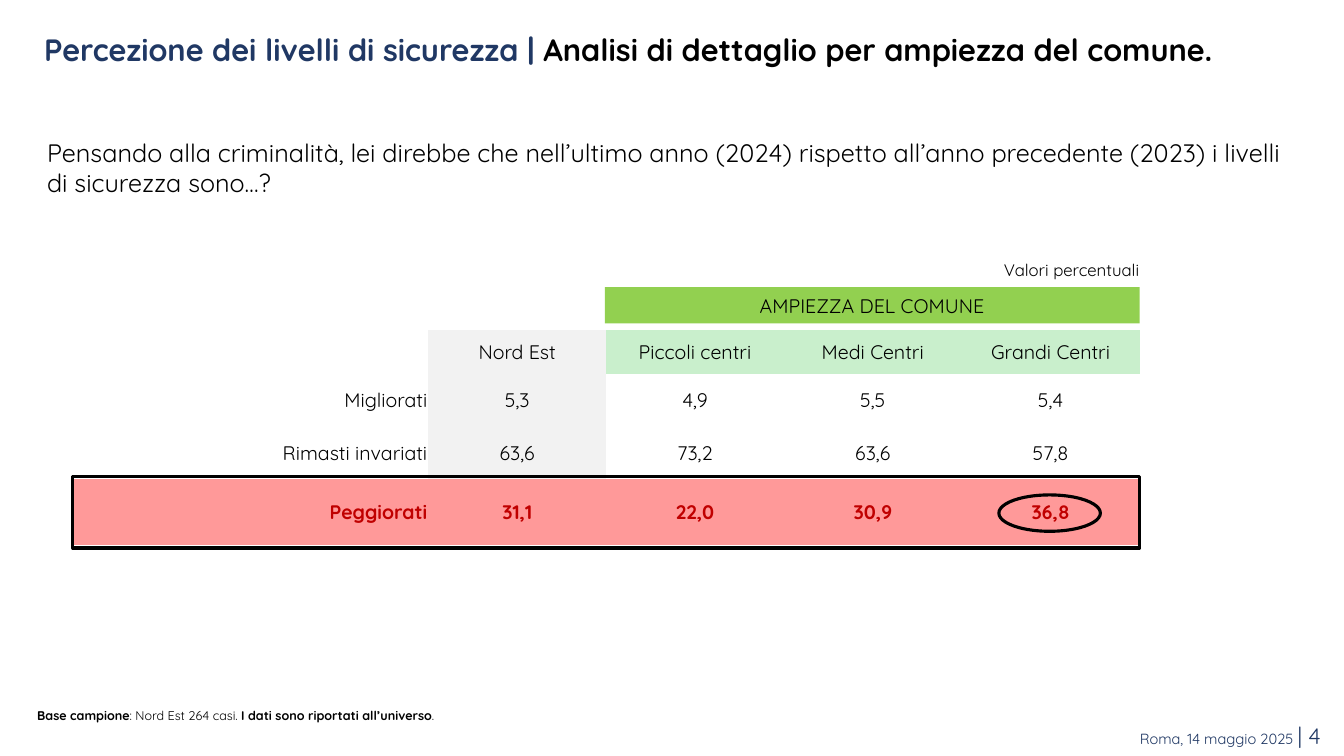
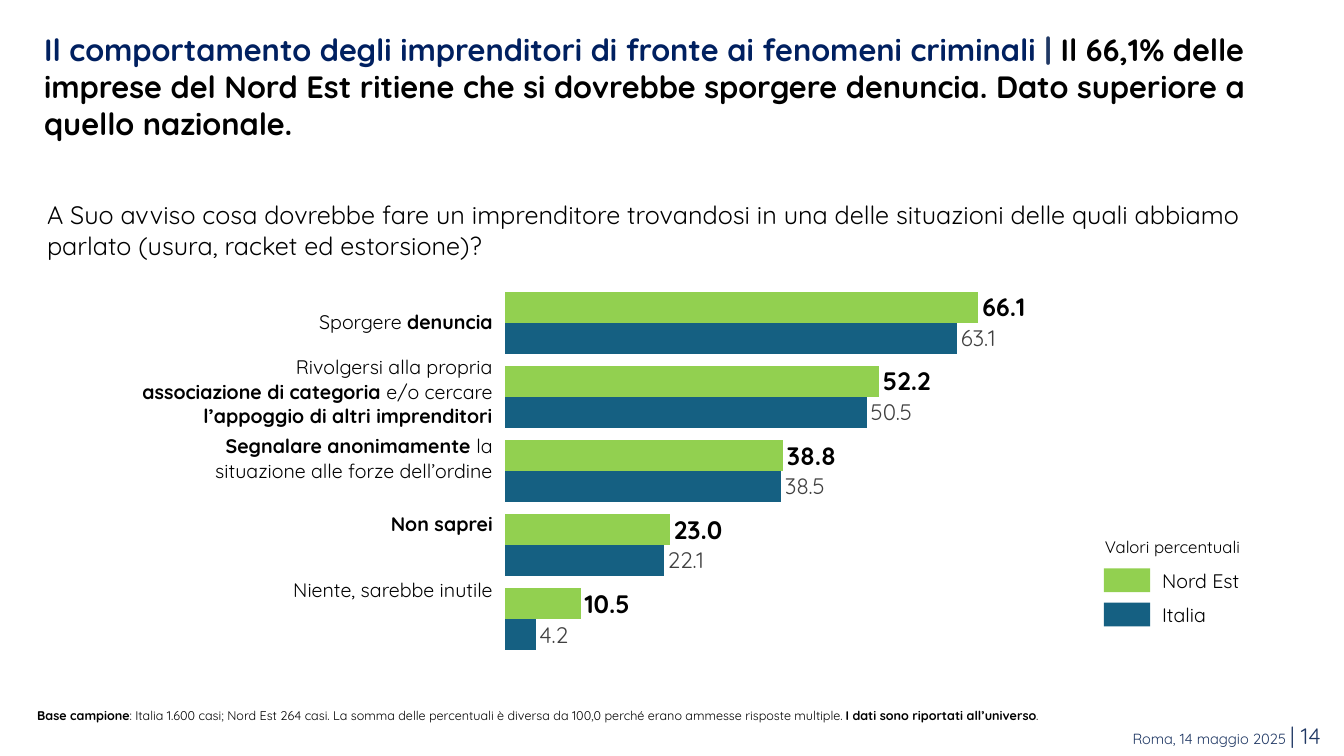
from lxml import etree
from pptx import Presentation
from pptx.chart.data import CategoryChartData
from pptx.dml.color import RGBColor
from pptx.enum import chart as charts, shapes, text
from pptx.oxml import parse_xml
from pptx.oxml.ns import nsdecls, qn
from pptx.util import Pt

FONT = "Quicksand"
BLACK = RGBColor(0x00, 0x00, 0x00)
WHITE = RGBColor(0xFF, 0xFF, 0xFF)
GREY = RGBColor(0x40, 0x40, 0x40)
LIGHT_GREY = RGBColor(0xF2, 0xF2, 0xF2)
NAVY = RGBColor(0x20, 0x38, 0x64)
DARK_BLUE = RGBColor(0x00, 0x20, 0x60)
BLUE = RGBColor(0x15, 0x60, 0x82)
GREEN = RGBColor(0x92, 0xD0, 0x50)
LIGHT_GREEN = RGBColor(0xC9, 0xEF, 0xCC)
PINK = RGBColor(0xFF, 0x99, 0x99)
RED = RGBColor(0xC0, 0x00, 0x00)
LEFT, CENTER, RIGHT, JUSTIFY = (
    text.PP_ALIGN.LEFT, text.PP_ALIGN.CENTER, text.PP_ALIGN.RIGHT, text.PP_ALIGN.JUSTIFY)
PLAIN_TABLE = "{2D5ABB26-0587-4C30-8999-92F81FD0307C}"


def write(paragraph, runs, size, alignment=LEFT):
    """Each run is (text, bold, colour) and may end with its own size."""
    paragraph.alignment = alignment
    for content, bold, color, *own_size in runs:
        run = paragraph.add_run()
        run.text = content
        run.font.name = FONT
        run.font.size = Pt(own_size[0] if own_size else size)
        run.font.bold = bold
        run.font.color.rgb = color


def add_text(slide, left, top, width, height, runs, size, alignment=LEFT):
    box = slide.shapes.add_textbox(Pt(left), Pt(top), Pt(width), Pt(height))
    box.text_frame.word_wrap = True
    paragraph = box.text_frame.paragraphs[0]
    write(paragraph, runs, size, alignment)
    return paragraph


presentation = Presentation()
presentation.slide_width, presentation.slide_height = Pt(960), Pt(540)

# Title, question, sample note and footer of both slides
pages = [
    {"number": 4, "title_height": 32.5, "question_top": 94.5, "question_width": 912,
     "title": [("Percezione dei livelli di sicurezza |", True, NAVY),
               (" Analisi di dettaglio per ampiezza del comune.", True, BLACK)],
     "question": "Pensando alla criminalità, lei direbbe che nell’ultimo anno (2024) rispetto "
                 "all’anno precedente (2023) i livelli di sicurezza sono…?",
     "sample": ": Nord Est 264 casi. "},
    {"number": 14, "title_height": 85.5, "question_top": 139, "question_width": 893.5,
     "title": [("Il comportamento degli imprenditori di fronte ai fenomeni criminali ",
                True, DARK_BLUE),
               ("|", True, NAVY),
               (" Il 66,1% delle imprese del Nord Est ritiene che si dovrebbe sporgere "
                "denuncia. Dato superiore a quello nazionale.", True, BLACK)],
     "question": "A Suo avviso cosa dovrebbe fare un imprenditore trovandosi in una delle "
                 "situazioni delle quali abbiamo parlato (usura, racket ed estorsione)?",
     "sample": ": Italia 1.600 casi; Nord Est 264 casi. La somma delle percentuali è diversa "
               "da 100,0 perché erano ammesse risposte multiple. "},
]
slides = []
for page in pages:
    slide = presentation.slides.add_slide(presentation.slide_layouts[5])
    slides.append(slide)
    title = slide.shapes.title
    title.left, title.top = Pt(26.5), Pt(19.5)
    title.width, title.height = Pt(929.5), Pt(page["title_height"])
    frame = title.text_frame
    frame.word_wrap = True
    frame.auto_size = text.MSO_AUTO_SIZE.NONE
    frame.vertical_anchor = text.MSO_ANCHOR.TOP
    frame.margin_left = frame.margin_right = Pt(5)
    frame.margin_top = frame.margin_bottom = Pt(2.7)
    write(frame.paragraphs[0], page["title"], 22)

    add_text(slide, 26.5, page["question_top"], page["question_width"], 51,
             [(page["question"], False, BLACK)], 18)
    note = add_text(slide, 19.5, 501, 903, 18,
                    [("Base campione", True, BLACK), (page["sample"], False, BLACK),
                     ("I dati sono riportati all’universo", True, BLACK),
                     (".", False, BLACK)], 9, JUSTIFY)
    note.line_spacing = 1.1
    add_text(slide, 451.5, 512, 499, 26.5,
             [("Roma, 14 maggio 2025 ", False, NAVY),
              (f"| {page['number']}", False, NAVY, 16)], 10.5, RIGHT)

security, behaviour = slides

# Security: band above the table
add_text(security, 666, 182, 155, 22, [("Valori percentuali", False, BLACK)], 12, RIGHT)
band = security.shapes.add_shape(shapes.MSO_SHAPE.RECTANGLE, Pt(432), Pt(205), Pt(382), Pt(26))
band.shadow.inherit = False
band.fill.solid()
band.fill.fore_color.rgb = GREEN
band.line.fill.background()
band.text_frame.vertical_anchor = text.MSO_ANCHOR.MIDDLE
write(band.text_frame.paragraphs[0], [("AMPIEZZA DEL COMUNE", False, BLACK)], 14, CENTER)

# Security: table
rows = [
    ["", "Nord Est", "Piccoli centri", "Medi Centri", "Grandi Centri"],
    ["Migliorati", "5,3", "4,9", "5,5", "5,4"],
    ["Rimasti invariati", "63,6", "73,2", "63,6", "57,8"],
    ["Peggiorati", "31,1", "22,0", "30,9", "36,8"],
]
table = security.shapes.add_table(4, 5, Pt(52), Pt(235.5), Pt(762), Pt(154)).table
table.first_row = table.horz_banding = False
table._tbl.tblPr.find(qn("a:tableStyleId")).text = PLAIN_TABLE
for column, width in zip(table.columns, [254] + [127] * 4):
    column.width = Pt(width)
for row, height in zip(table.rows, [31.5, 37.5, 37.5, 47.5]):
    row.height = Pt(height)
for i, values in enumerate(rows):
    worse = i == 3
    for j, value in enumerate(values):
        cell = table.cell(i, j)
        cell.vertical_anchor = text.MSO_ANCHOR.MIDDLE
        cell.margin_left = cell.margin_right = cell.margin_top = Pt(0.7)
        cell.margin_bottom = Pt(0)
        if worse:
            fill = PINK
        elif j == 1:
            fill = LIGHT_GREY
        elif i == 0:
            fill = LIGHT_GREEN if j else WHITE
        else:
            fill = None
        if fill is None:
            cell.fill.background()
        else:
            cell.fill.solid()
            cell.fill.fore_color.rgb = fill
        if value:
            write(cell.text_frame.paragraphs[0],
                  [(value, worse, RED if worse else BLACK)], 14, CENTER if j else RIGHT)

# Security: frame around the last row and ring around its highest value
for outline, left, top, width, height in [
        (shapes.MSO_SHAPE.RECTANGLE, 52, 340.5, 762, 51),
        (shapes.MSO_SHAPE.OVAL, 713.5, 353.5, 72.5, 26)]:
    shape = security.shapes.add_shape(outline, Pt(left), Pt(top), Pt(width), Pt(height))
    shape.shadow.inherit = False
    shape.fill.background()
    shape.line.color.rgb = BLACK
    shape.line.width = Pt(2.25)

# Behaviour: answers beside the bars
answers = [
    [[("Sporgere ", False), ("denuncia", True)]],
    [[("Rivolgersi alla propria", False)],
     [("associazione di categoria", True), (" e/o cercare ", False),
      ("l’appoggio di altri imprenditori", True)]],
    [[("Segnalare anonimamente ", True), ("la situazione alle forze dell’ordine", False)]],
    [[("Non saprei", True)]],
    [[("Niente, sarebbe inutile", False)]],
]
table = behaviour.shapes.add_table(5, 1, Pt(95), Pt(206.5), Pt(257), Pt(235)).table
table.first_row = table.horz_banding = False
table._tbl.tblPr.find(qn("a:tableStyleId")).text = PLAIN_TABLE
for i, answer in enumerate(answers):
    cell = table.cell(i, 0)
    cell.fill.background()
    cell.vertical_anchor = text.MSO_ANCHOR.MIDDLE
    cell.margin_left = cell.margin_right = cell.margin_top = cell.margin_bottom = Pt(0)
    for k, runs in enumerate(answer):
        frame = cell.text_frame
        paragraph = frame.add_paragraph() if k else frame.paragraphs[0]
        write(paragraph, [(content, bold, BLACK) for content, bold in runs], 14, RIGHT)

# Behaviour: bar chart, lowest answer first
chart_data = CategoryChartData(number_format="0.0")
chart_data.categories = ["1", "2", "3", "4", "5"]
chart_data.add_series("Italia", [4.2, 22.1, 38.5, 50.5, 63.1])
chart_data.add_series("Nord Est", [10.5, 23, 38.8, 52.2, 66.1])
chart = behaviour.shapes.add_chart(
    charts.XL_CHART_TYPE.BAR_CLUSTERED, Pt(349), Pt(189.5), Pt(402), Pt(294), chart_data).chart
chart.has_legend = chart.has_title = False
chart.font.name, chart.font.size = FONT, Pt(10)
chart.font.color.rgb = BLACK
chart.category_axis.visible = False
axis = chart.value_axis
axis.visible = axis.has_major_gridlines = False
axis.minimum_scale, axis.maximum_scale = 0, 70
plot = chart.plots[0]
plot.gap_width, plot.overlap = 40, 0
plot.vary_by_categories = False
for series, fill, size, bold, color in zip(
        plot.series, [BLUE, GREEN], [16, 18], [False, True], [GREY, BLACK]):
    series.format.fill.solid()
    series.format.fill.fore_color.rgb = fill
    labels = series.data_labels
    labels.show_value = True
    labels.position = charts.XL_LABEL_POSITION.OUTSIDE_END
    labels.number_format, labels.number_format_is_linked = "0.0", False
    labels.font.name, labels.font.size, labels.font.bold = FONT, Pt(size), bold
    labels.font.color.rgb = color

# Behaviour: fixed plot area, so that bars meet the answers
plot_area = chart._chartSpace.chart.plotArea
for layout in plot_area.findall(qn("c:layout")):
    plot_area.remove(layout)
layout = parse_xml(f"<c:layout {nsdecls('c')}><c:manualLayout/></c:layout>")
for tag, value in [("layoutTarget", "inner"), ("xMode", "edge"), ("yMode", "edge"),
                   ("x", "0.03"), ("y", "0.05"), ("w", "0.89"), ("h", "0.9")]:
    etree.SubElement(layout[0], qn(f"c:{tag}")).set("val", value)
plot_area.insert(0, layout)

# Behaviour: legend
add_text(behaviour, 769, 380, 124, 22, [("Valori percentuali", False, BLACK)], 12, RIGHT)
for i, (name, fill) in enumerate([("Nord Est", GREEN), ("Italia", BLUE)]):
    top = 406 + 24.5 * i
    key = behaviour.shapes.add_shape(
        shapes.MSO_SHAPE.RECTANGLE, Pt(788.5), Pt(top), Pt(33), Pt(17))
    key.shadow.inherit = False
    key.fill.solid()
    key.fill.fore_color.rgb = fill
    key.line.fill.background()
    add_text(behaviour, 823, top - 3.5, 96.5, 24.5, [(name, False, BLACK)], 14)

presentation.save("out.pptx")
